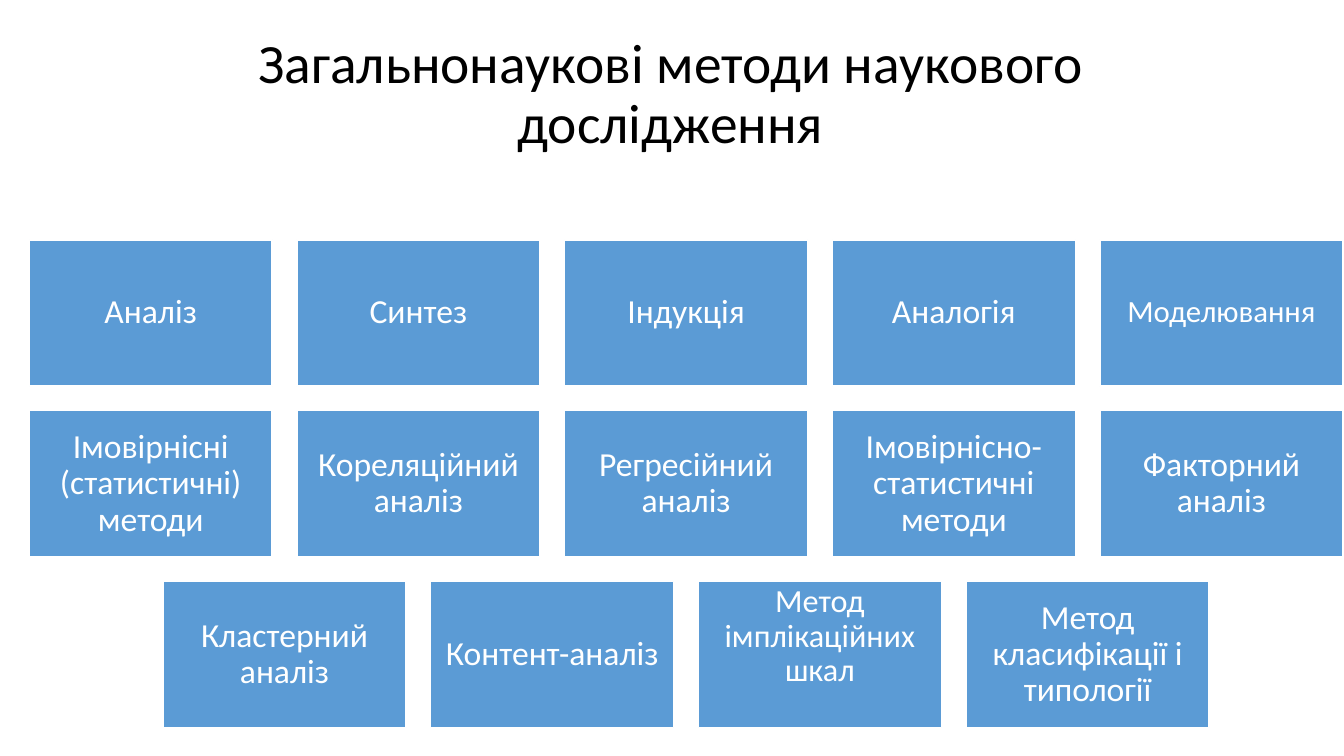
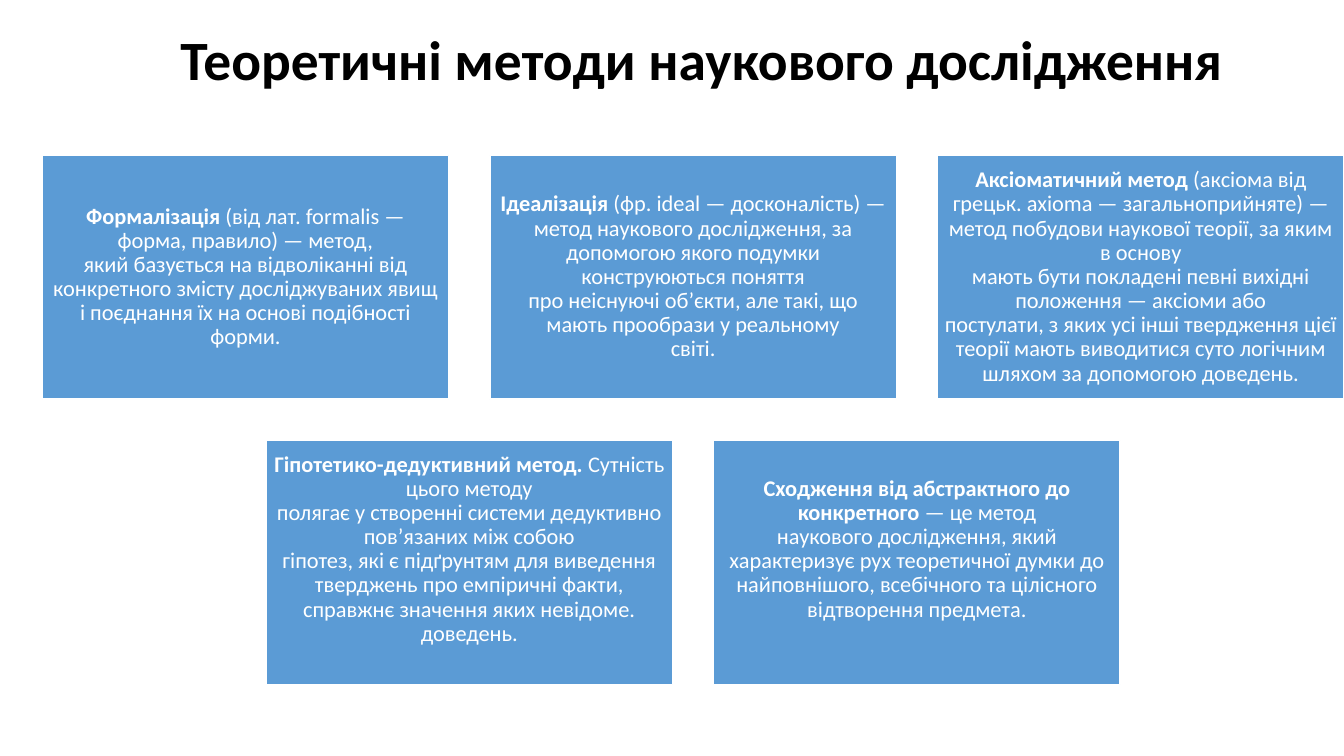
import pptx
import pptx.util
import pptx.dml.color
import pptx.enum.shapes
import pptx.enum.text

Inches, Pt = pptx.util.Inches, pptx.util.Pt
RGBColor = pptx.dml.color.RGBColor
PP_ALIGN = pptx.enum.text.PP_ALIGN
MIDDLE = pptx.enum.text.MSO_ANCHOR.MIDDLE

BLUE = RGBColor(0x5B, 0x9B, 0xD5)
WHITE = RGBColor(0xFF, 0xFF, 0xFF)
BLACK = RGBColor(0, 0, 0)
FONT = "Calibri"
LINE_SPACING = 0.9

prs = pptx.Presentation()
prs.slide_width, prs.slide_height = Inches(13.33), Inches(7.5)


def add_titled_slide(text, left, width, height, align, bold):
    s = prs.slides.add_slide(prs.slide_layouts[5])
    title = s.shapes.title
    title.left, title.top = Inches(left), Inches(0.25)
    title.width, title.height = Inches(width), Inches(height)
    tf = title.text_frame
    tf.text = text
    tf.auto_size = pptx.enum.text.MSO_AUTO_SIZE.NONE
    tf.vertical_anchor = MIDDLE
    p = tf.paragraphs[0]
    p.alignment, p.line_spacing = align, LINE_SPACING
    p.font.name, p.font.size, p.font.bold = FONT, Pt(39.6), bold
    p.font.color.rgb = BLACK
    return s


def add_card_grid(s, rows, left, right, top, width, height, size, inset, special):
    """Draw rows of (lead, body) cards, centring each row under the first.

    special maps a lead to its own (size, inset, bottom inset).
    """
    cols = len(rows[0])
    gap = (right - left - cols * width) / (cols - 1)
    for i, row in enumerate(rows):
        row_left = left + (cols - len(row)) * (width + gap) / 2
        for j, (lead, body) in enumerate(row):
            sp = s.shapes.add_shape(
                pptx.enum.shapes.MSO_SHAPE.RECTANGLE,
                Inches(row_left + j * (width + gap)),
                Inches(top + i * (height + gap)),
                Inches(width), Inches(height))
            sp.shadow.inherit = False
            sp.fill.solid()
            sp.fill.fore_color.rgb = BLUE
            sp.line.color.rgb = WHITE
            sp.line.width = Pt(1)

            pts, margin, bottom = special.get(lead, (size, inset, inset))
            tf = sp.text_frame
            tf.word_wrap = True
            tf.vertical_anchor = MIDDLE
            tf.margin_left = tf.margin_right = tf.margin_top = Inches(margin)
            tf.margin_bottom = Inches(bottom)
            p = tf.paragraphs[0]
            p.alignment, p.line_spacing = PP_ALIGN.CENTER, LINE_SPACING
            p.font.name, p.font.size = FONT, Pt(pts)
            p.font.color.rgb = WHITE
            r = p.add_run()
            r.text = lead
            if body:
                r.text += " "
                r.font.bold = True
                for n, line in enumerate(body.split("\n")):
                    if n:
                        p.add_line_break()
                    p.add_run().text = line


# General scientific methods
s = add_titled_slide("Загальнонаукові методи наукового дослідження",
                     1.78, 9.74, 1.4, PP_ALIGN.CENTER, False)
general_methods = [
    ["Аналіз", "Синтез", "Індукція", "Аналогія", "Моделювання"],
    ["Імовірнісні (статистичні) методи", "Кореляційний аналіз",
     "Регресійний аналіз", "Імовірнісно-статистичні методи",
     "Факторний аналіз"],
    ["Кластерний аналіз", "Контент-аналіз", "Метод імплікаційних шкал",
     "Метод класифікації і типології"],
]
add_card_grid(s, [[(name, "") for name in row] for row in general_methods],
              left=0.29, right=13.32, top=2.38, width=2.41, height=1.45,
              size=24, inset=0.1,
              special={"Моделювання": (22, 0.09, 0.09),
                       "Метод імплікаційних шкал": (23, 0.02, 0.38)})

# Theoretical methods
s = add_titled_slide("Теоретичні методи наукового дослідження",
                     1.69, 11.32, 0.75, PP_ALIGN.LEFT, True)
theoretical_methods = [
    [("Формалізація",
      "(від лат. formalis — форма, правило) — метод,\n"
      "який базується на відволіканні від конкретного змісту досліджуваних "
      "явищ і поєднання їх на основі подібності форми."),
     ("Ідеалізація",
      "(фр. ideal — досконалість) — метод наукового дослідження, за "
      "допомогою якого подумки конструюються поняття\n"
      "про неіснуючі об’єкти, але такі, що мають прообрази у реальному\n"
      "світі."),
     ("Аксіоматичний метод",
      "(аксіома від грецьк. axioma — загальноприйняте) — метод побудови "
      "наукової теорії, за яким в основу\n"
      "мають бути покладені певні вихідні положення — аксіоми або\n"
      "постулати, з яких усі інші твердження цієї теорії мають виводитися "
      "суто логічним шляхом за допомогою доведень.")],
    [("Гіпотетико-дедуктивний метод.",
      "Сутність цього методу\n"
      "полягає у створенні системи дедуктивно пов’язаних між собою\n"
      "гіпотез, які є підґрунтям для виведення тверджень про емпіричні "
      "факти, справжнє значення яких невідоме.\n"
      "доведень."),
     ("Сходження від абстрактного до конкретного",
      "— це метод\n"
      "наукового дослідження, який характеризує рух теоретичної думки до "
      "найповнішого, всебічного та цілісного відтворення предмета.")],
]
add_card_grid(s, theoretical_methods,
              left=0.42, right=13.33, top=1.54, width=4.03, height=2.42,
              size=16, inset=0.07,
              special={lead: (16, 0.07, 0.33)
                       for lead, body in theoretical_methods[1]})

prs.save("out.pptx")
